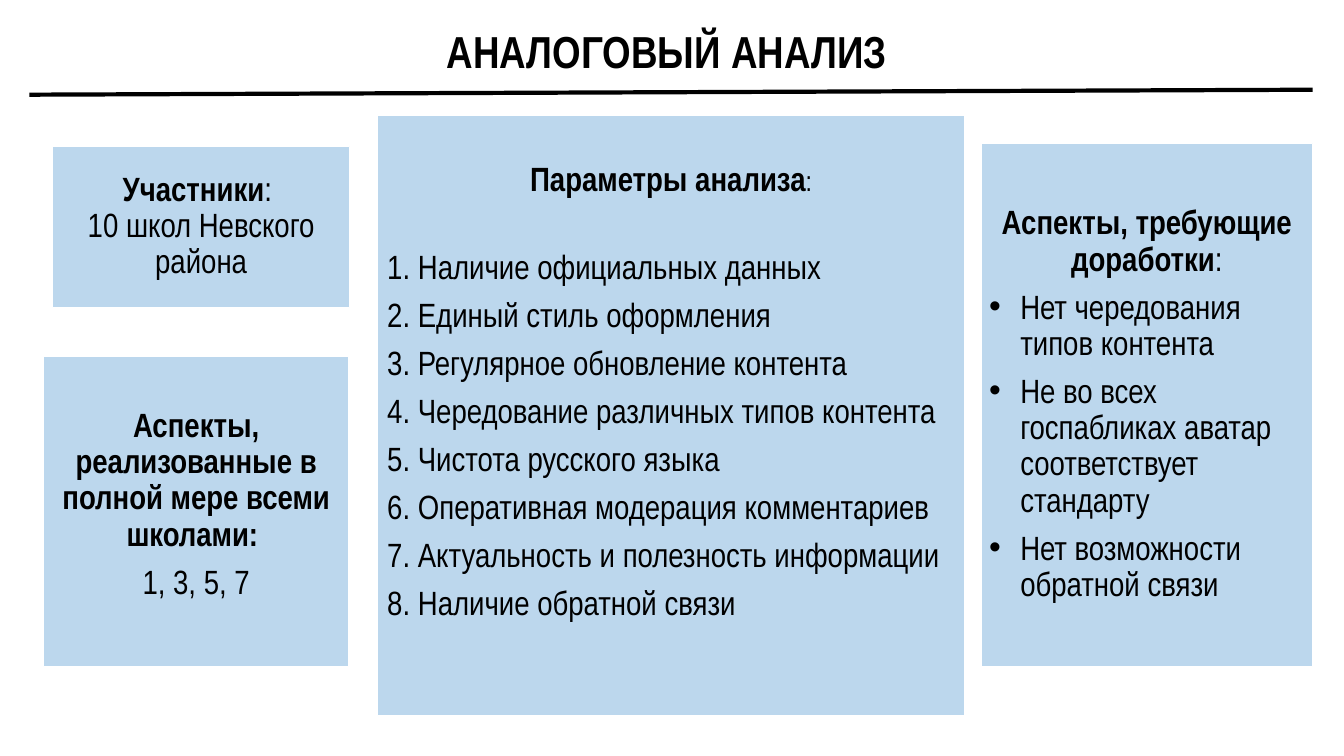
"""Build the slide that sums up the comparative analysis of school pages."""
from dataclasses import dataclass

from lxml.etree import SubElement
from pptx import Presentation
from pptx.dml.color import RGBColor
from pptx.enum.shapes import MSO_CONNECTOR
from pptx.enum.text import MSO_ANCHOR, MSO_AUTO_SIZE, PP_ALIGN
from pptx.oxml.ns import qn
from pptx.shapes.placeholder import SlidePlaceholder
from pptx.slide import Slide
from pptx.text.text import _Paragraph
from pptx.util import Inches, Pt

BLACK = RGBColor(0x00, 0x00, 0x00)
WHITE = RGBColor(0xFF, 0xFF, 0xFF)
PALE_BLUE = RGBColor(0xBC, 0xD7, 0xED)
FONT = "Arial Narrow"
BODY_SIZE = 24
SLIDE_WIDTH, SLIDE_HEIGHT = Inches(13.33), Inches(7.5)
COMPARISON_LAYOUT = 4


@dataclass(frozen=True)
class Area:
    """A rectangle in percent of the slide's width and height."""
    left: float
    top: float
    width: float
    height: float


@dataclass(frozen=True)
class Line:
    """A paragraph: a bold part, a regular part and their layout."""
    bold: str = ""
    regular: str = ""
    centred: bool = True
    bulleted: bool = False
    space_before: float = 8.4
    regular_size: int = BODY_SIZE


@dataclass(frozen=True)
class Panel:
    """A filled panel; text is centred vertically unless top_inset is given."""
    placeholder: int
    area: Area
    lines: tuple[Line, ...]
    inset: float = 0.1
    top_inset: float | None = None


PARAMETERS = (
    "Наличие официальных данных",
    "Единый стиль оформления",
    "Регулярное обновление контента",
    "Чередование различных типов контента",
    "Чистота русского языка",
    "Оперативная модерация комментариев",
    "Актуальность и полезность информации",
    "Наличие обратной связи",
)
SHORTCOMINGS = (
    "Нет чередования типов контента",
    "Не во всех госпабликах аватар соответствует стандарту",
    "Нет возможности обратной связи",
)
TITLE = Line(bold="АНАЛОГОВЫЙ АНАЛИЗ ")
TITLE_AREA = Area(0.45, 1.33, 99.1, 11.6)
PANELS = (
    Panel(1, Area(3.9, 19.33, 22.13, 21.33), (
        Line("Участники", ": "),
        Line(regular="10 школ Невского района", space_before=0),
    )),
    Panel(4, Area(72.99, 18.93, 24.68, 69.2), (
        Line("Аспекты, требующие доработки", ":"),
        *(Line(regular=flaw, centred=False, bulleted=True) for flaw in SHORTCOMINGS),
    ), inset=0.08),
    Panel(2, Area(28.06, 15.2, 43.74, 79.4), (
        Line("Параметры анализа", ":", regular_size=20),
        *(Line(regular=f"{number}. {parameter}", centred=False,
               space_before=37 if number == 1 else 8.4)
          for number, parameter in enumerate(PARAMETERS, 1)),
    ), top_inset=0.47),
    Panel(3, Area(3.23, 47.2, 22.73, 40.93), (
        Line("Аспекты, реализованные в полной мере всеми школами: "),
        Line(regular="1, 3, 5, 7"),
    ), inset=0.08, top_inset=0.51),
)


def across(percent: float) -> int:
    """Turn a share of the slide's width into a length."""
    return round(SLIDE_WIDTH * percent / 100)


def down(percent: float) -> int:
    """Turn a share of the slide's height into a length."""
    return round(SLIDE_HEIGHT * percent / 100)


def place(holder: SlidePlaceholder, area: Area) -> None:
    """Move a placeholder and fix its text behaviour."""
    holder.left, holder.top = across(area.left), down(area.top)
    holder.width, holder.height = across(area.width), down(area.height)
    holder.text_frame.word_wrap = True
    holder.text_frame.auto_size = MSO_AUTO_SIZE.NONE
    holder.text_frame.vertical_anchor = MSO_ANCHOR.MIDDLE


def set_bullet(paragraph: _Paragraph, bulleted: bool) -> None:
    """Give the paragraph a hanging black bullet, or none."""
    properties = paragraph._p.get_or_add_pPr()
    indent = Inches(0.31) if bulleted else 0
    properties.set("marL", str(indent))
    properties.set("indent", str(-indent))
    if bulleted:
        colour = SubElement(properties, qn("a:buClr"))
        SubElement(colour, qn("a:srgbClr"), val=str(BLACK))
        SubElement(properties, qn("a:buFont"), typeface="Arial")
        SubElement(properties, qn("a:buChar"), char="•")
    else:
        SubElement(properties, qn("a:buNone"))


def write_line(paragraph: _Paragraph, line: Line, first: bool, bold_size: int = BODY_SIZE) -> None:
    """Fill a paragraph with the bold and regular parts of a line."""
    set_bullet(paragraph, line.bulleted)
    paragraph.alignment = PP_ALIGN.CENTER if line.centred else PP_ALIGN.LEFT
    paragraph.line_spacing = 0.9
    paragraph.space_before = Pt(0 if first else line.space_before)
    paragraph.space_after = Pt(0)
    parts = ((line.bold, True, bold_size), (line.regular, False, line.regular_size))
    for words, bold, size in parts:
        if words:
            run = paragraph.add_run()
            run.text = words
            run.font.name = FONT
            run.font.size = Pt(size)
            run.font.bold = bold
            run.font.color.rgb = BLACK


def draw_panel(slide: Slide, panel: Panel) -> None:
    """Turn a body placeholder into a filled panel with its text."""
    holder = slide.placeholders[panel.placeholder]
    place(holder, panel.area)
    holder.fill.solid()
    holder.fill.fore_color.rgb = PALE_BLUE
    holder.line.color.rgb = WHITE
    holder.line.width = Pt(0.85)
    frame = holder.text_frame
    frame.margin_left = frame.margin_right = Inches(panel.inset)
    frame.margin_top = frame.margin_bottom = Inches(panel.inset)
    if panel.top_inset is not None:
        frame.vertical_anchor = MSO_ANCHOR.TOP
        frame.margin_top = Inches(panel.top_inset)
    for index, line in enumerate(panel.lines):
        paragraph = frame.add_paragraph() if index else frame.paragraphs[0]
        write_line(paragraph, line, first=index == 0)


def draw_title(slide: Slide) -> None:
    """Write the title and rule it off from the panels."""
    heading = slide.shapes.title
    place(heading, TITLE_AREA)
    write_line(heading.text_frame.paragraphs[0], TITLE, first=True, bold_size=32)
    rule = slide.shapes.add_connector(
        MSO_CONNECTOR.STRAIGHT, across(2.18), down(12.53), across(97.67), down(11.87))
    rule.line.color.rgb = BLACK
    rule.line.width = Pt(3)
    SubElement(rule._element.spPr, qn("a:effectLst"))


def main() -> None:
    """Build and save the presentation."""
    presentation = Presentation()
    presentation.slide_width, presentation.slide_height = SLIDE_WIDTH, SLIDE_HEIGHT
    slide = presentation.slides.add_slide(presentation.slide_layouts[COMPARISON_LAYOUT])
    draw_title(slide)
    for panel in PANELS:
        draw_panel(slide, panel)
    presentation.save("out.pptx")


if __name__ == "__main__":
    main()
